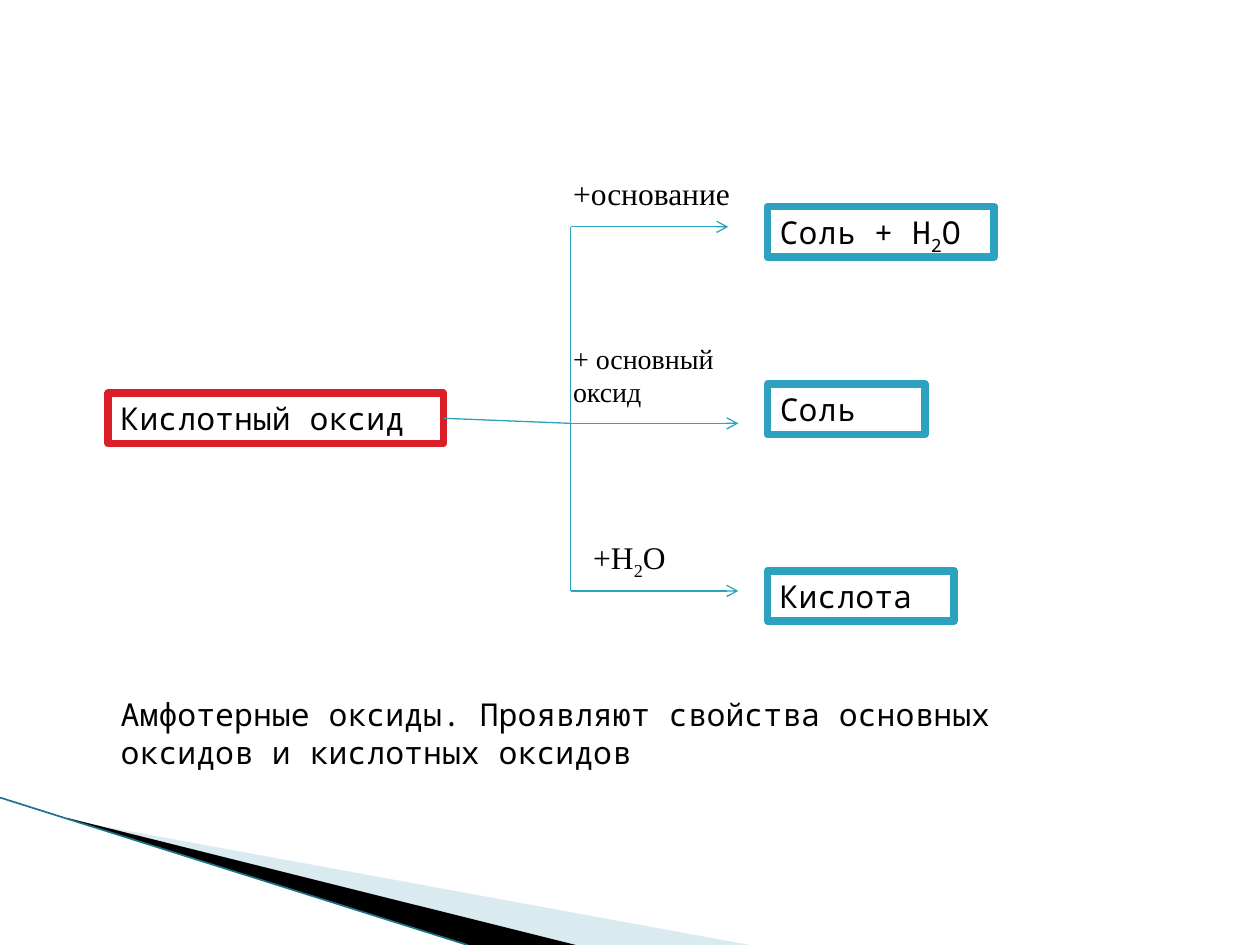
from dataclasses import dataclass

from lxml.etree import SubElement
from pptx import Presentation
from pptx.dml.color import RGBColor
from pptx.enum.shapes import MSO_CONNECTOR, MSO_SHAPE
from pptx.enum.text import MSO_ANCHOR, MSO_AUTO_SIZE, PP_ALIGN
from pptx.oxml.ns import qn
from pptx.util import Inches, Pt


@dataclass(frozen=True)
class Theme:
    text: RGBColor = RGBColor(0x00, 0x00, 0x00)
    paper: RGBColor = RGBColor(0xFF, 0xFF, 0xFF)
    red: RGBColor = RGBColor(0xDA, 0x1F, 0x28)
    teal: RGBColor = RGBColor(0x2D, 0xA2, 0xBF)
    edge: RGBColor = RGBColor(0x1B, 0x75, 0x87)
    wing: RGBColor = RGBColor(0xA0, 0xCB, 0xDC)
    box_font: str = "Noto Sans Mono"
    label_font: str = "Times New Roman"
    size: Pt = Pt(18)
    small_size: Pt = Pt(16)
    border: Pt = Pt(4.33)
    line: Pt = Pt(0.75)
    edge_line: Pt = Pt(0.95)


theme = Theme()


def write(shape, pieces, font_name, size):
    """Fill a shape with text; every second piece is a subscript."""
    text_frame = shape.text_frame
    text_frame.word_wrap = True
    text_frame.auto_size = MSO_AUTO_SIZE.SHAPE_TO_FIT_TEXT
    text_frame.vertical_anchor = MSO_ANCHOR.TOP
    paragraph = text_frame.paragraphs[0]
    paragraph.alignment = PP_ALIGN.LEFT
    for index, piece in enumerate(pieces):
        run = paragraph.add_run()
        run.text = piece
        run.font.name = font_name
        run.font.size = size
        run.font.color.rgb = theme.text
        if index % 2:
            run._r.get_or_add_rPr().set("baseline", "-25000")


def connect(start, end, color, width, arrow=False):
    """Draw a straight line between two points given in inches."""
    connector = slide.shapes.add_connector(
        MSO_CONNECTOR.STRAIGHT, *(Inches(value) for value in start + end))
    connector.line.color.rgb = color
    connector.line.width = width
    if arrow:
        SubElement(connector.line._get_or_add_ln(), qn("a:tailEnd"), type="arrow")
    SubElement(connector._element.spPr, qn("a:effectLst"))
    return connector


presentation = Presentation()
presentation.slide_width = Inches(10)
presentation.slide_height = Inches(7.5)
slide = presentation.slides.add_slide(presentation.slide_layouts[6])

# Corner decoration
wings = [
    ([(0.55, 6.51), (5.95, 7.5), (4.56, 7.5), (0.55, 6.5)], theme.wing, 40),
    ([(0.53, 6.49), (4.57, 7.5), (3.72, 7.5), (0.54, 6.5)], theme.text, 100),
]
for points, color, opacity in wings:
    corners = [(Inches(x), Inches(y)) for x, y in points]
    builder = slide.shapes.build_freeform(*corners[0])
    builder.add_line_segments(corners[1:], close=True)
    wing = builder.convert_to_shape()
    wing.shadow.inherit = False
    wing.fill.solid()
    wing.fill.fore_color.rgb = color
    wing.line.fill.background()
    if opacity < 100:
        fill_color = wing._element.spPr.find(qn("a:solidFill"))[0]
        SubElement(fill_color, qn("a:alpha"), val=str(opacity * 1000))
connect((0, 6.33), (3.71, 7.5), theme.edge, theme.edge_line)

# Framed substances: the oxide and its three products
substances = [
    (0.86, 3.12, 2.66, theme.red, ["Кислотный оксид"]),
    (6.09, 1.64, 1.8, theme.teal, ["Соль + H", "2", "O"]),
    (6.09, 3.05, 1.25, theme.teal, ["Соль"]),
    (6.09, 4.53, 1.48, theme.teal, ["Кислота"]),
]
boxes = []
for left, top, width, color, pieces in substances:
    box = slide.shapes.add_shape(
        MSO_SHAPE.RECTANGLE, Inches(left), Inches(top), Inches(width), Inches(0.4))
    box.shadow.inherit = False
    box.fill.solid()
    box.fill.fore_color.rgb = theme.paper
    box.line.color.rgb = color
    box.line.width = theme.border
    SubElement(box.line._get_or_add_ln(), qn("a:round"))
    write(box, pieces, theme.box_font, theme.size)
    boxes.append(box)

# Branching lines
trunk_x = 4.53
stem = connect((3.52, 3.32), (trunk_x, 3.36), theme.teal, theme.line)
stem.begin_connect(boxes[0], 3)
connect((trunk_x, 1.8), (trunk_x, 4.69), theme.teal, theme.line)
for y, end_x in [(1.8, 5.78), (3.36, 5.86), (4.69, 5.86)]:
    connect((trunk_x, y), (end_x, y), theme.teal, theme.line, arrow=True)

# Reagent labels and the closing note
captions = [
    (4.45, 1.33, 1.64, 0.4, ["+основание"], theme.label_font, theme.size),
    (4.45, 2.66, 1.64, 0.64, ["+ основный оксид"], theme.label_font, theme.small_size),
    (4.61, 4.22, 1.09, 0.4, ["+H", "2", "O"], theme.label_font, theme.size),
    (0.86, 5.47, 8.05, 1.01,
     ["Амфотерные оксиды. Проявляют свойства основных оксидов и кислотных оксидов"],
     theme.box_font, theme.size),
]
for left, top, width, height, pieces, font_name, size in captions:
    caption = slide.shapes.add_textbox(
        Inches(left), Inches(top), Inches(width), Inches(height))
    write(caption, pieces, font_name, size)

presentation.save("out.pptx")
